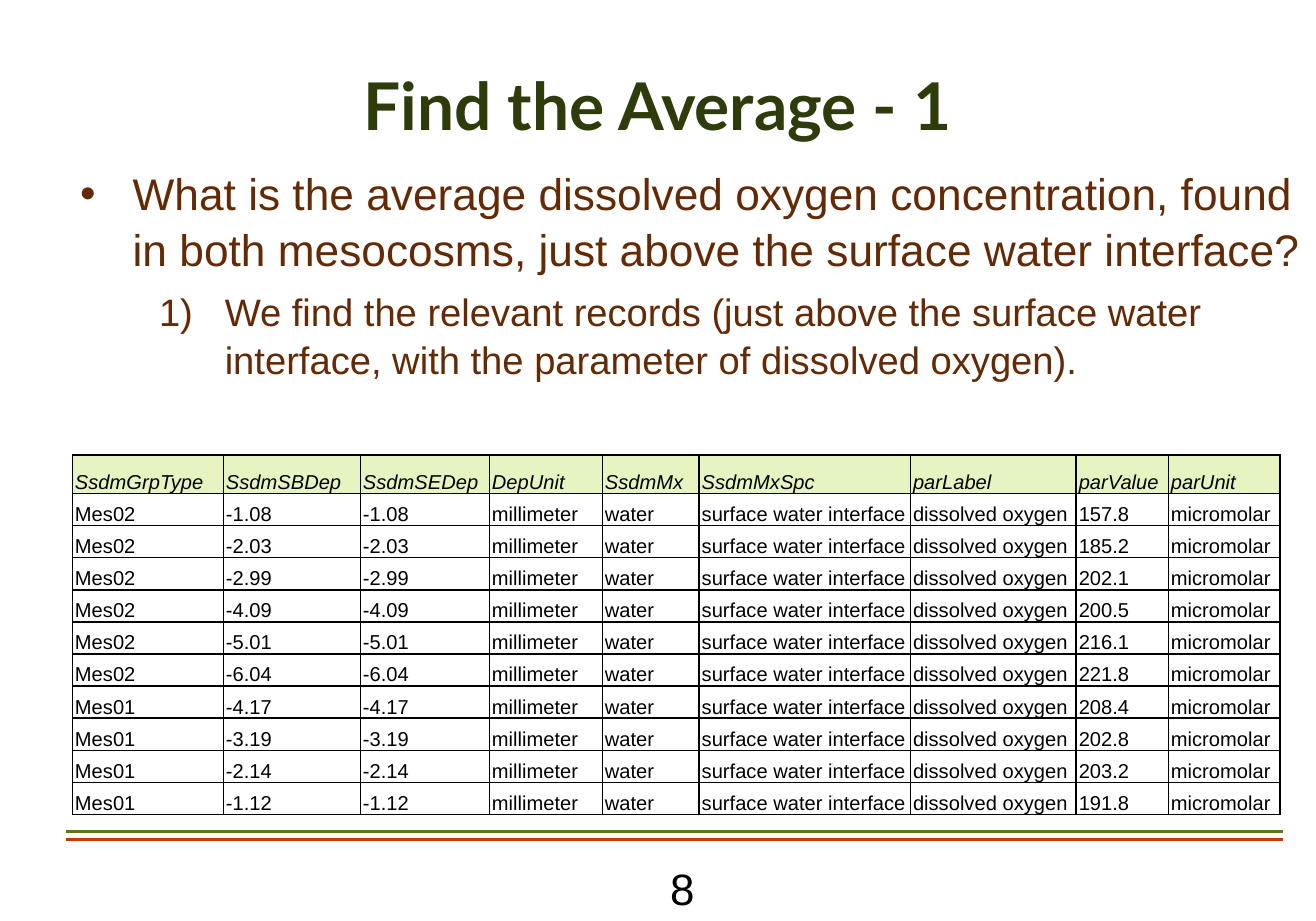
from lxml import etree
from pptx import Presentation
from pptx.dml.color import RGBColor
from pptx.enum.shapes import MSO_CONNECTOR
from pptx.enum.text import MSO_ANCHOR, PP_ALIGN
from pptx.oxml import parse_xml
from pptx.oxml.ns import nsdecls, qn
from pptx.util import Pt

STRAIGHT = MSO_CONNECTOR.STRAIGHT
TOP, MIDDLE, BOTTOM = MSO_ANCHOR.TOP, MSO_ANCHOR.MIDDLE, MSO_ANCHOR.BOTTOM
CENTER = PP_ALIGN.CENTER

COLORS = {
    "title": "2E3C0B",
    "body": "642A05",
    "ink": "000000",
    "header": "E5F4C1",
    "green": "5B7817",
    "orange": "C83801",
}
HEADERS = ["SsdmGrpType", "SsdmSBDep", "SsdmSEDep", "DepUnit", "SsdmMx",
           "SsdmMxSpc", "parLabel", "parValue", "parUnit"]
COLUMN_WIDTHS = [82.6, 75, 70.6, 61.8, 53, 115.6, 90.7, 50.4, 61.2]
HEADER_HEIGHT, ROW_HEIGHT = 20.9, 17.6
OXYGEN_BY_DEPTH = {
    "Mes02": [("-1.08", "157.8"), ("-2.03", "185.2"), ("-2.99", "202.1"),
              ("-4.09", "200.5"), ("-5.01", "216.1"), ("-6.04", "221.8")],
    "Mes01": [("-4.17", "208.4"), ("-3.19", "202.8"), ("-2.14", "203.2"),
              ("-1.12", "191.8")],
}


class SlideBuilder:
    """Draws styled elements on one slide, with lengths in points."""

    def __init__(self, slide, font="Arial"):
        self.slide = slide
        self.font = font

    def style(self, paragraph, size, color, font=None, bold=False, italic=False):
        paragraph.font.name = font or self.font
        paragraph.font.size = Pt(size)
        paragraph.font.bold = bold
        paragraph.font.italic = italic
        paragraph.font.color.rgb = RGBColor.from_string(COLORS[color])

    def frame(self, left, top, width, height, anchor=TOP):
        box = self.slide.shapes.add_textbox(Pt(left), Pt(top), Pt(width), Pt(height))
        box.text_frame.word_wrap = True
        box.text_frame.vertical_anchor = anchor
        return box.text_frame

    def centered(self, text, bounds, size, color, anchor=TOP, **style):
        paragraph = self.frame(*bounds, anchor).paragraphs[0]
        paragraph.text = text
        paragraph.alignment = CENTER
        self.style(paragraph, size, color, **style)

    def list_item(self, paragraph, text, size, margin, hanging, marker, level=0):
        paragraph.text = text
        paragraph.level = level
        properties = paragraph._p.get_or_add_pPr()
        properties.set("marL", str(Pt(margin)))
        properties.set("indent", str(-Pt(hanging)))
        properties.append(parse_xml(
            f'<a:buClr {nsdecls("a")}><a:srgbClr val="{COLORS["body"]}"/></a:buClr>'))
        properties.append(parse_xml(
            f'<a:buFont {nsdecls("a")} typeface="{self.font}"/>'))
        properties.append(parse_xml(f'<a:{marker} {nsdecls("a")}/>'))
        paragraph.line_spacing = 1.05
        self.style(paragraph, size, "body")

    def rule(self, left, right, y, color):
        line = self.slide.shapes.add_connector(STRAIGHT, Pt(left), Pt(y), Pt(right), Pt(y))
        line.line.width = Pt(2)
        line.line.color.rgb = RGBColor.from_string(COLORS[color])
        etree.SubElement(line._element.spPr, qn("a:effectLst"))

    def cell(self, cell, text, is_header):
        cell.margin_left = cell.margin_right = Pt(1.44)
        cell.margin_top = cell.margin_bottom = 0
        cell.vertical_anchor = BOTTOM
        properties = cell._tc.get_or_add_tcPr()
        for side in "LRTB":
            properties.append(parse_xml(
                f'<a:ln{side} {nsdecls("a")} w="{Pt(1)}"><a:solidFill>'
                f'<a:srgbClr val="{COLORS["ink"]}"/></a:solidFill></a:ln{side}>'))
        if is_header:
            cell.fill.solid()
            cell.fill.fore_color.rgb = RGBColor.from_string(COLORS["header"])
        else:
            cell.fill.background()
        paragraph = cell.text_frame.paragraphs[0]
        paragraph.text = text
        paragraph.line_spacing = 1.15
        self.style(paragraph, 11, "ink", italic=is_header)

    def table(self, left, top, rows, widths, heights):
        table = self.slide.shapes.add_table(
            len(rows), len(widths), Pt(left), Pt(top),
            Pt(sum(widths)), Pt(sum(heights))).table
        table.first_row = table.horz_banding = False
        for column, width in zip(table.columns, widths):
            column.width = Pt(width)
        for index, (row, height) in enumerate(zip(rows, heights)):
            table.rows[index].height = Pt(height)
            for position, text in enumerate(row):
                self.cell(table.cell(index, position), text, index == 0)


def main():
    deck = Presentation()
    deck.slide_width, deck.slide_height = Pt(720), Pt(504)
    builder = SlideBuilder(deck.slides.add_slide(deck.slide_layouts[6]))

    builder.rule(36, 702, 455, "green")
    builder.rule(36, 702, 459.4, "orange")
    builder.centered("Find the Average - 1", (24.5, 36, 670.3, 42.5), 36, "title",
                     MIDDLE, font="Lato", bold=True)

    body = builder.frame(36.7, 86, 683.3, 162)
    question = body.paragraphs[0]
    builder.list_item(
        question,
        "What is the average dissolved oxygen concentration, found in both "
        "mesocosms, just above the surface water interface?",
        24.2, 28.8, 28.8, 'buChar char="•"')
    question.space_after = Pt(6)
    builder.list_item(
        body.add_paragraph(),
        "We find the relevant records (just above the surface water interface, "
        "with the parameter of dissolved oxygen).",
        20.9, 79.2, 36, 'buAutoNum type="arabicParenR"', level=3)

    builder.centered("8", (289.4, 468, 167.8, 28.8), 24, "ink")

    records = [
        [mesocosm, depth, depth, "millimeter", "water", "surface water interface",
         "dissolved oxygen", oxygen, "micromolar"]
        for mesocosm, readings in OXYGEN_BY_DEPTH.items()
        for depth, oxygen in readings
    ]
    builder.table(39.6, 249.1, [HEADERS] + records, COLUMN_WIDTHS,
                  [HEADER_HEIGHT] + [ROW_HEIGHT] * len(records))
    deck.save("out.pptx")


if __name__ == "__main__":
    main()
